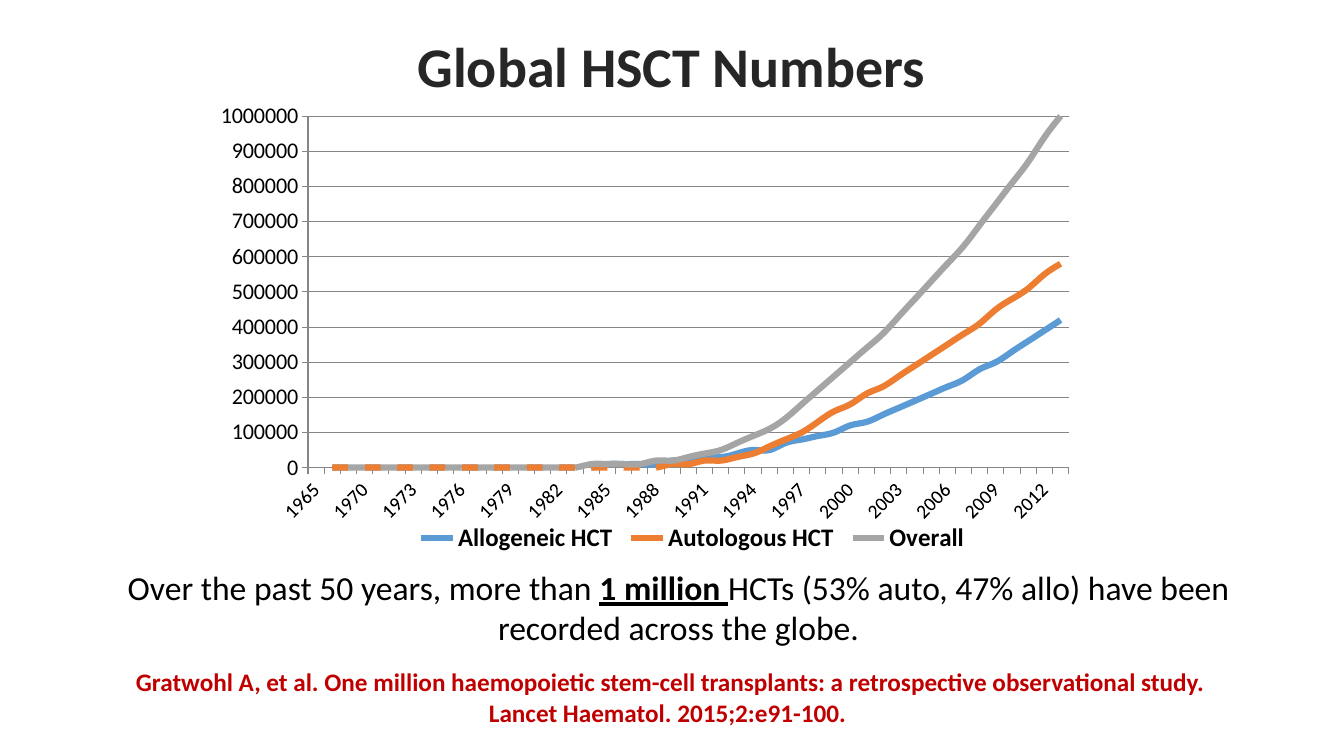
from lxml import etree
from pptx import Presentation
from pptx import util as u
from pptx.chart.data import CategoryChartData
from pptx.dml.color import RGBColor
from pptx.enum import chart as ch, text
from pptx.oxml.ns import qn

PX = 9144  # EMU per px, 100 px to the inch
BLACK, TITLE, RED, GRID = "000000", "262626", "C00000", "868686"

# The last point carries no year label
YEARS = ["1965"] + [str(year) for year in range(1968, 2013)] + [""]

# name, colour, leading gaps, final non-zero values in tens of thousands
SERIES = [
    ("Allogeneic HCT", "5B9BD5", 0,
     [1, 1, 1, 1, 2, 2, 3, 3, 4, 5, 5, 7, 8, 9, 10, 12, 13, 15, 17, 19,
      21, 23, 25, 28, 30, 33, 36, 39, 42]),
    ("Autologous HCT", "ED7D31", 1,
     [1, 1, 2, 2, 3, 4, 6, 8, 10, 13, 16, 18, 21, 23, 26, 29, 32, 35, 38,
      41, 45, 48, 51, 55, 58]),
    ("Overall", "A5A5A5", 1,
     [1, 1, 1, 1, 2, 2, 3, 4, 5, 7, 9, 11, 14, 18, 22, 26, 30, 34, 38, 43,
      48, 53, 58, 63, 69, 75, 81, 87, 94, 100]),
]


def color(value):
    return RGBColor.from_string(value)


def manual_layout(inner, x, y, w, h):
    """Build a c:layout element from fractions of the chart area."""
    layout = etree.Element(qn("c:layout"))
    manual = etree.SubElement(layout, qn("c:manualLayout"))
    settings = [("layoutTarget", "inner")] if inner else []
    settings += [("xMode", "edge"), ("yMode", "edge"),
                 ("x", x), ("y", y), ("w", w), ("h", h)]
    for tag, value in settings:
        etree.SubElement(manual, qn("c:" + tag)).set("val", str(value))
    return layout


class SlideBuilder:
    font_name = "Calibri"

    def __init__(self, presentation):
        self.slide = presentation.slides.add_slide(presentation.slide_layouts[6])

    def style(self, font, size, value=BLACK, bold=False):
        font.name, font.size, font.bold = self.font_name, u.Pt(size), bold
        font.color.rgb = color(value)

    def text(self, box, runs, size, value, spacing=1.0):
        """Centred text box; runs are (words, bold, underline)."""
        shape = self.slide.shapes.add_textbox(*(n * PX for n in box))
        frame = shape.text_frame
        frame.word_wrap = True
        frame.vertical_anchor = text.MSO_ANCHOR.MIDDLE
        paragraph = frame.paragraphs[0]
        paragraph.alignment = text.PP_ALIGN.CENTER
        paragraph.line_spacing = spacing
        for words, bold, underline in runs:
            run = paragraph.add_run()
            run.text = words
            self.style(run.font, size, value, bold)
            run.font.underline = underline

    def axis(self, axis, size):
        axis.major_tick_mark = ch.XL_TICK_MARK.OUTSIDE
        axis.minor_tick_mark = ch.XL_TICK_MARK.NONE
        axis.format.line.color.rgb = color(GRID)
        self.style(axis.tick_labels.font, size)

    def line_chart(self, box, years, series_list):
        data = CategoryChartData(number_format="0")
        data.categories = years
        for name, _, gaps, tail in series_list:
            zeros = len(years) - gaps - len(tail)
            data.add_series(name, [None] * gaps + [0] * zeros
                            + [value * 10000 for value in tail])
        chart = self.slide.shapes.add_chart(
            ch.XL_CHART_TYPE.LINE, *(n * PX for n in box), data).chart
        chart.has_title = False
        self.style(chart.font, 10)

        # Lines
        for series, (_, value, _, _) in zip(chart.plots[0].series, series_list):
            series.smooth = True
            series.marker.style = ch.XL_MARKER_STYLE.NONE
            series.format.line.width = u.Pt(4.5)
            series.format.line.color.rgb = color(value)
        chart.plots[0].vary_by_categories = False

        # Axes
        values, categories = chart.value_axis, chart.category_axis
        self.axis(values, 16)
        values.minimum_scale, values.maximum_scale = 0, 1000000
        values.major_unit = 100000
        values.tick_labels.number_format = "0"
        values.tick_labels.number_format_is_linked = False
        values.has_major_gridlines = True
        values.major_gridlines.format.line.color.rgb = color(GRID)
        self.axis(categories, 14)
        element = categories._element
        element.find(qn("c:txPr")).find(qn("a:bodyPr")).set("rot", "-2700000")
        skip = etree.Element(qn("c:tickLblSkip"))
        skip.set("val", "3")
        element.find(qn("c:noMultiLvlLbl")).addprevious(skip)

        # Legend
        chart.has_legend = True
        legend = chart.legend
        legend.position = ch.XL_LEGEND_POSITION.BOTTOM
        legend.include_in_layout = False
        self.style(legend.font, 18, bold=True)
        for old in legend._element.findall(qn("c:layout")):
            legend._element.remove(old)
        legend._element.find(qn("c:legendPos")).addnext(
            manual_layout(False, 0.21, 0.91, 0.66, 0.08))

        # Plot position
        plot_area = chart._chartSpace.chart.plotArea
        for old in plot_area.findall(qn("c:layout")):
            plot_area.remove(old)
        plot_area.insert(0, manual_layout(True, 0.09, 0.05, 0.89, 0.75))


def main():
    presentation = Presentation()
    presentation.slide_width, presentation.slide_height = 1333 * PX, 750 * PX
    builder = SlideBuilder(presentation)

    # Title
    builder.text((216, 29, 900, 79), [("Global HSCT Numbers", True, False)],
                 40, TITLE, 0.9)
    # Cumulative transplants by year
    builder.line_chart((219, 92, 858, 465), YEARS, SERIES)
    # Key message
    builder.text((108, 557, 1130, 91), [
        ("Over the past 50 years, more than ", False, False),
        ("1 million ", True, True),
        ("HCTs (53% auto, 47% allo) have been recorded across the globe.",
         False, False)], 24, BLACK)
    # Reference
    builder.text((100, 656, 1130, 71), [
        ("Gratwohl A, et al. One million haemopoietic stem-cell transplants: "
         "a retrospective observational study. Lancet Haematol. "
         "2015;2:e91-100. ", True, False)], 18, RED)

    presentation.save("out.pptx")


if __name__ == "__main__":
    main()
